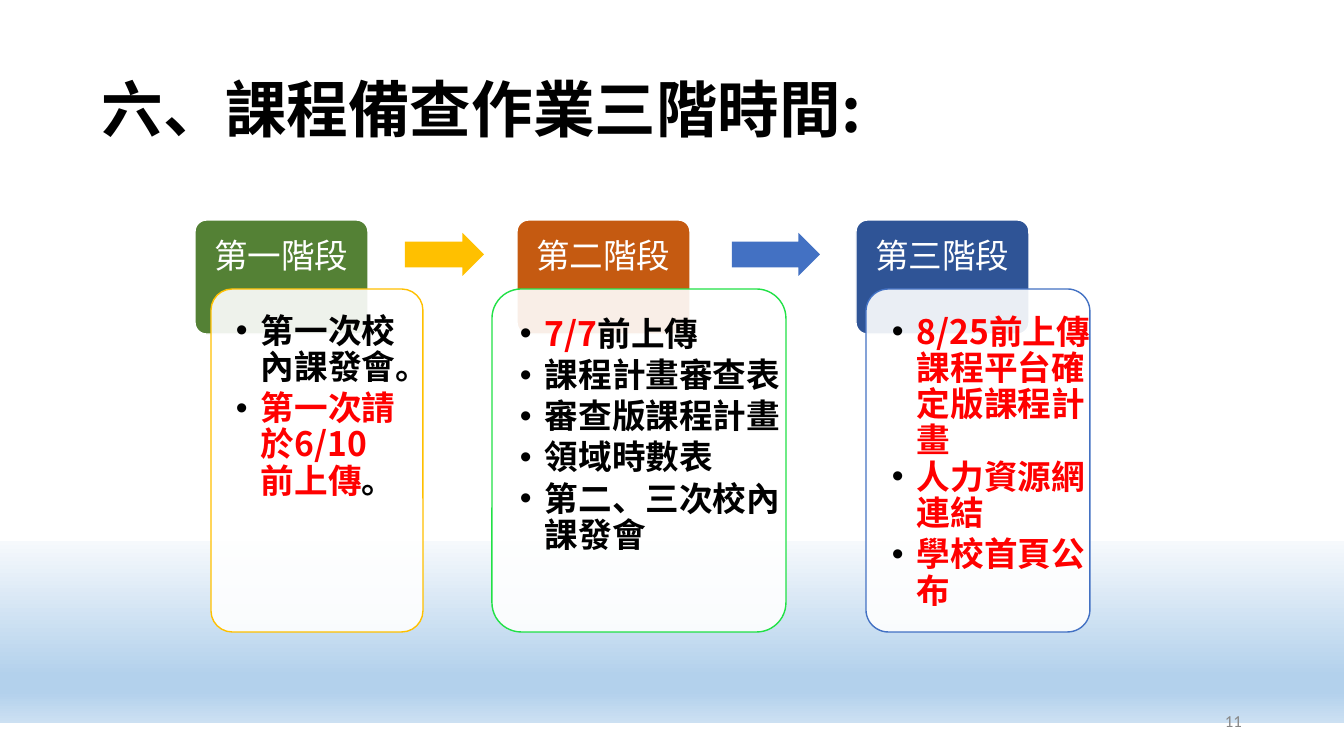
from pptx import Presentation
from pptx.dml.color import RGBColor
from pptx.enum.shapes import MSO_SHAPE as SHAPE
from pptx.enum.text import MSO_ANCHOR as ANCHOR, PP_ALIGN as ALIGN
from pptx.oxml.ns import qn
from pptx.util import Pt
from lxml.etree import SubElement
from dataclasses import dataclass

# Content: runs are (text, colour name), with space before each bullet in points
TITLE = "六、課程備查作業三階時間:"
PAGE = "11"
STAGES = [
    dict(name="第一階段", head="548135", edge="FFC000", head_x=195,
         card=(211, 212), body=(217, 295, 200, 331),
         bullets=[(0, [("第一次校內課發會。", "ink")]),
                  (3.6, [("第一次請於6/10前上傳", "alert"), ("。", "ink")])]),
    dict(name="第二階段", head="C55A11", edge="21E146", head_x=517,
         card=(492, 294), body=(501, 298, 305, 326),
         bullets=[(0, [("7/7", "alert"), ("前上傳", "ink")]),
                  (3.6, [("課程計畫審查表", "ink")]),
                  (3.6, [("審查版課程計畫", "ink")]),
                  (3.6, [("領域時數表", "ink")]),
                  (3.6, [("第二、三次校內課發會", "ink")])]),
    dict(name="第三階段", head="2F5496", edge="4371C3", head_x=856,
         card=(866, 224), body=(873, 296, 239, 330),
         bullets=[(0, [("8/25前上傳課程平台確定版課程計畫", "alert")]),
                  (0, [("人力資源網連結", "alert")]),
                  (3.6, [("學校首頁公布", "alert")])]),
]
ARROWS = [(405, 79, "FFC000"), (732, 88, "4371C3")]  # left, width, colour
BAND_STOPS = [(0, "F6F9FC"), (74, "B3D1EC"), (83, "B3D1EC"), (100, "CCE0F2")]


@dataclass(frozen=True)
class Theme:
    ink: str = "000000"
    alert: str = "FF0000"
    paper: str = "FFFFFF"
    muted: str = "888888"
    latin: str = "Calibri"
    title_font: str = "Noto Sans CJK TC"
    body_font: str = "Noto Sans CJK SC"
    title_size: int = 44
    text_size: int = 24
    page_size: int = 12


T = Theme()
EMU_PER_PX = 914400 / 100.8
HEAD_Y, HEAD_W, HEAD_H, HEAD_TEXT_H = 220, 173, 114, 69
CARD_Y, CARD_H = 289, 343
ARROW_Y, ARROW_H = 233, 43
INDENT = 25


def px(n):
    return round(n * EMU_PER_PX)


def rgb(code):
    return RGBColor.from_string(code)


def add_shape(kind, box, fill=None, line=None, adj=(), alpha=None):
    sp = slide.shapes.add_shape(kind, *map(px, box))
    sp.shadow.inherit = False
    for i, value in enumerate(adj):
        sp.adjustments[i] = value
    if fill:
        sp.fill.solid()
        sp.fill.fore_color.rgb = rgb(fill)
    if alpha:
        color = sp.fill._xPr.find(qn("a:solidFill"))[0]
        SubElement(color, qn("a:alpha"), val=str(alpha * 1000))
    if line:
        sp.line.color.rgb = rgb(line)
        sp.line.width = Pt(1)
    else:
        sp.line.fill.background()
    return sp


def add_frame(box, insets, anchor=ANCHOR.TOP):
    tf = slide.shapes.add_textbox(*map(px, box)).text_frame
    tf.word_wrap = True
    tf.vertical_anchor = anchor
    tf.margin_left, tf.margin_top, tf.margin_right, tf.margin_bottom = map(px, insets)
    return tf


def add_run(p, text, size, color, latin, asian, bold=False):
    r = p.add_run()
    r.text = text
    r.font.size = Pt(size)
    r.font.bold = bold
    r.font.color.rgb = rgb(color)
    r.font.name = latin
    SubElement(r._r.get_or_add_rPr(), qn("a:ea"), typeface=asian)


def set_bullet(p):
    pPr = p._p.get_or_add_pPr()
    pPr.set("marL", str(px(INDENT)))
    pPr.set("indent", str(-px(INDENT)))
    SubElement(SubElement(pPr, qn("a:buClr")), qn("a:srgbClr"), val=T.ink)
    SubElement(pPr, qn("a:buFont"), typeface="Arial")
    SubElement(pPr, qn("a:buChar"), char="•")


prs = Presentation()
prs.slide_width, prs.slide_height = px(1344), px(756)
slide = prs.slides.add_slide(prs.slide_layouts[6])

# Gradient band at the foot
band = add_shape(SHAPE.RECTANGLE, (0, 541, 1344, 182))
band.fill.gradient()
band.fill.gradient_angle = 270
stops = band.fill._xPr.find(qn("a:gradFill")).find(qn("a:gsLst"))
for old in list(stops):
    stops.remove(old)
for pos, code in BAND_STOPS:
    gs = SubElement(stops, qn("a:gs"), pos=str(pos * 1000))
    SubElement(gs, qn("a:srgbClr"), val=code)

# Title
p = add_frame((92, 40, 1159, 146), (10, 5, 10, 5), ANCHOR.MIDDLE).paragraphs[0]
p.line_spacing = 0.9
add_run(p, TITLE, T.title_size, T.ink, T.title_font, T.title_font, True)

# Stages: coloured head, then the card that overlaps it
for stage in STAGES:
    x = stage["head_x"]
    add_shape(SHAPE.ROUNDED_RECTANGLE, (x, HEAD_Y, HEAD_W, HEAD_H),
              stage["head"], T.paper, [0.1])
    p = add_frame((x, HEAD_Y, HEAD_W, HEAD_TEXT_H), (19, 19, 19, 10)).paragraphs[0]
    p.line_spacing = 0.9
    add_run(p, stage["name"], T.text_size, T.paper, T.latin, T.title_font)

    card_x, card_w = stage["card"]
    add_shape(SHAPE.ROUNDED_RECTANGLE, (card_x, CARD_Y, card_w, CARD_H),
              T.paper, stage["edge"], [0.1], alpha=90)
    tf = add_frame(stage["body"], (19, 19, 19, 19))
    for i, (before, runs) in enumerate(stage["bullets"]):
        p = tf.add_paragraph() if i else tf.paragraphs[0]
        p.line_spacing = 0.9
        p.space_before = Pt(before)
        set_bullet(p)
        for text, color in runs:
            add_run(p, text, T.text_size, getattr(T, color),
                    T.body_font, T.body_font, True)

# Arrows between stages
for x, w, color in ARROWS:
    add_shape(SHAPE.RIGHT_ARROW, (x, ARROW_Y, w, ARROW_H), color, adj=[0.6, 0.5])

# Page number
p = add_frame((950, 701, 302, 40), (10, 5, 10, 5), ANCHOR.MIDDLE).paragraphs[0]
p.alignment = ALIGN.RIGHT
add_run(p, PAGE, T.page_size, T.muted, T.latin, T.latin)

prs.save("out.pptx")
